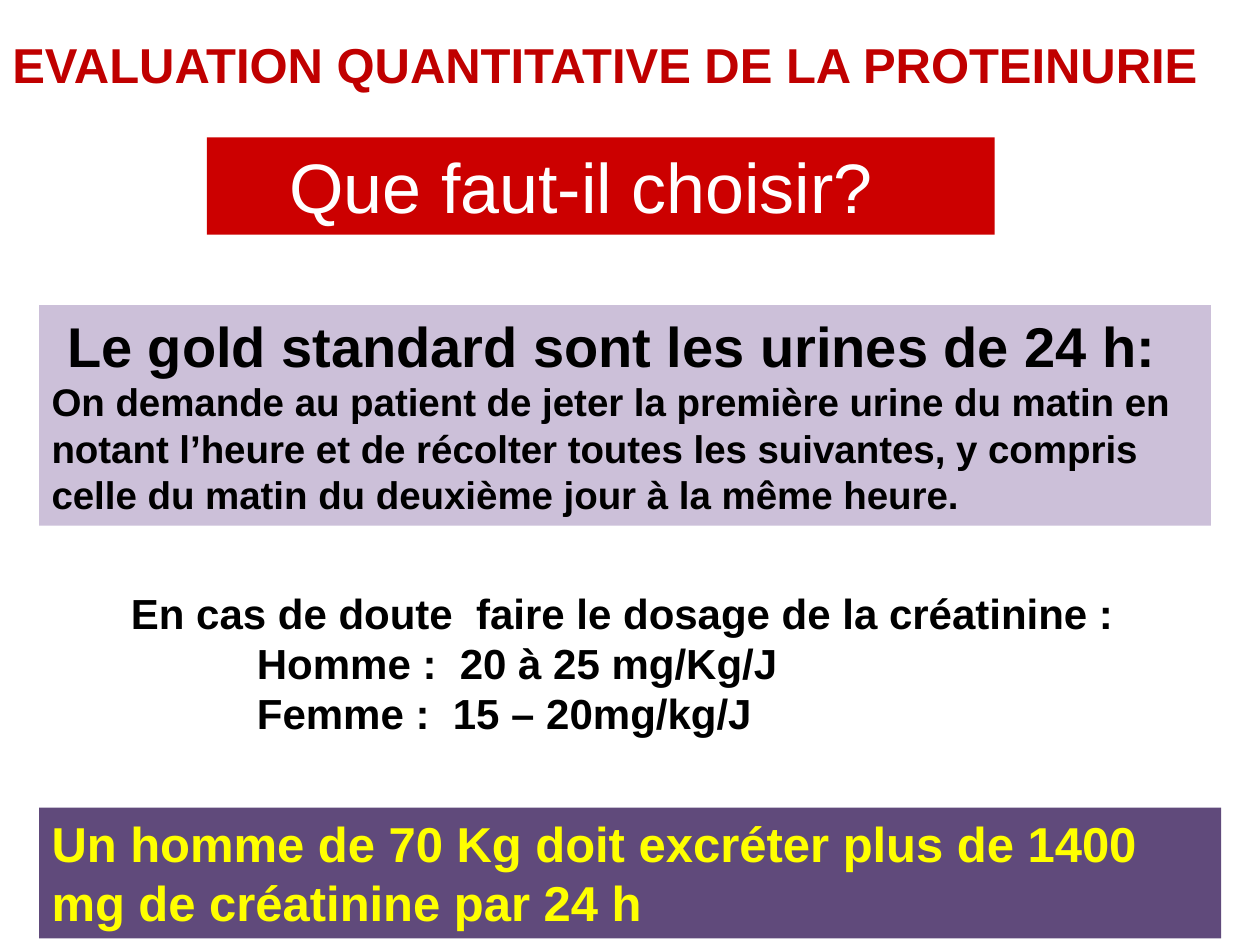
import dataclasses

import pptx
import pptx.dml.color
import pptx.enum.shapes
import pptx.enum.text
import pptx.util

Cm = pptx.util.Cm
ALIGN = pptx.enum.text.PP_ALIGN


@dataclasses.dataclass(frozen=True)
class Theme:
    font: str = "Arial"
    title: str = "C00000"
    banner: str = "CC0000"
    panel: str = "CCC0D9"
    result: str = "604A7B"
    light: str = "FFFFFF"
    dark: str = "000000"
    accent: str = "FFFF00"
    small: int = 22
    body: int = 24
    heading: int = 28
    lead: int = 32
    question: int = 40


@dataclasses.dataclass
class Line:
    text: str
    size: int
    bold: bool = True
    align: ALIGN = ALIGN.LEFT
    indent: float = 0


class SlideBuilder:
    def __init__(self, slide, theme):
        self.s = slide
        self.theme = theme

    def text(self, box, lines, color):
        sp = self.s.shapes.add_textbox(*map(Cm, box))
        self.set_lines(sp, lines, color)
        return sp

    def panel(self, box, fill, lines, color):
        rect = pptx.enum.shapes.MSO_SHAPE.RECTANGLE
        sp = self.s.shapes.add_shape(rect, *map(Cm, box))
        sp.shadow.inherit = False
        sp.fill.solid()
        sp.fill.fore_color.rgb = pptx.dml.color.RGBColor.from_string(fill)
        sp.line.fill.background()
        self.set_lines(sp, lines, color)
        return sp

    def set_lines(self, sp, lines, color):
        tf = sp.text_frame
        tf.word_wrap = True
        tf.auto_size = pptx.enum.text.MSO_AUTO_SIZE.SHAPE_TO_FIT_TEXT
        tf.vertical_anchor = pptx.enum.text.MSO_ANCHOR.TOP
        for i, line in enumerate(lines):
            p = tf.paragraphs[0] if i == 0 else tf.add_paragraph()
            p.text = line.text
            p.alignment = line.align
            p.font.name = self.theme.font
            p.font.size = pptx.util.Pt(line.size)
            p.font.bold = line.bold
            p.font.color.rgb = pptx.dml.color.RGBColor.from_string(color)
            if line.indent:
                p._p.get_or_add_pPr().set("marL", str(int(Cm(line.indent))))


def main():
    prs = pptx.Presentation()
    prs.slide_width, prs.slide_height = Cm(25.4), Cm(19.05)
    t = Theme()
    b = SlideBuilder(prs.slides.add_slide(prs.slide_layouts[6]), t)
    left = 0.79

    b.text((0, 0.58, 25.4, 1.45),
           [Line("EVALUATION QUANTITATIVE DE LA PROTEINURIE", t.heading)], t.title)

    question = b.panel(
        (4.17, 2.77, 15.88, 1.96), t.banner,
        [Line("Que faut-il choisir?", t.question, bold=False, align=ALIGN.CENTER)],
        t.light)
    question.text_frame.margin_right = Cm(1.04)

    b.panel((left, 6.15, 23.62, 4.45), t.panel, [
        Line(" Le gold standard sont les urines de 24 h:", t.lead),
        Line("On demande au patient de jeter la première urine du matin en "
             "notant l’heure et de récolter toutes les suivantes, y compris "
             "celle du matin du deuxième jour à la même heure.", t.small),
    ], t.dark)

    b.text((2.39, 11.71, 21.64, 3.33), [
        Line("En cas de doute  faire le dosage de la créatinine :", t.body),
        Line("Homme :  20 à 25 mg/Kg/J", t.body, indent=2.54),
        Line("Femme :  15 – 20mg/kg/J", t.body, indent=2.54),
    ], t.dark)

    b.panel((left, 16.28, 23.83, 2.64), t.result,
            [Line("Un homme de 70 Kg doit excréter plus de 1400 "
                  "mg de créatinine par 24 h", t.heading)], t.accent)

    prs.save("out.pptx")


if __name__ == "__main__":
    main()
